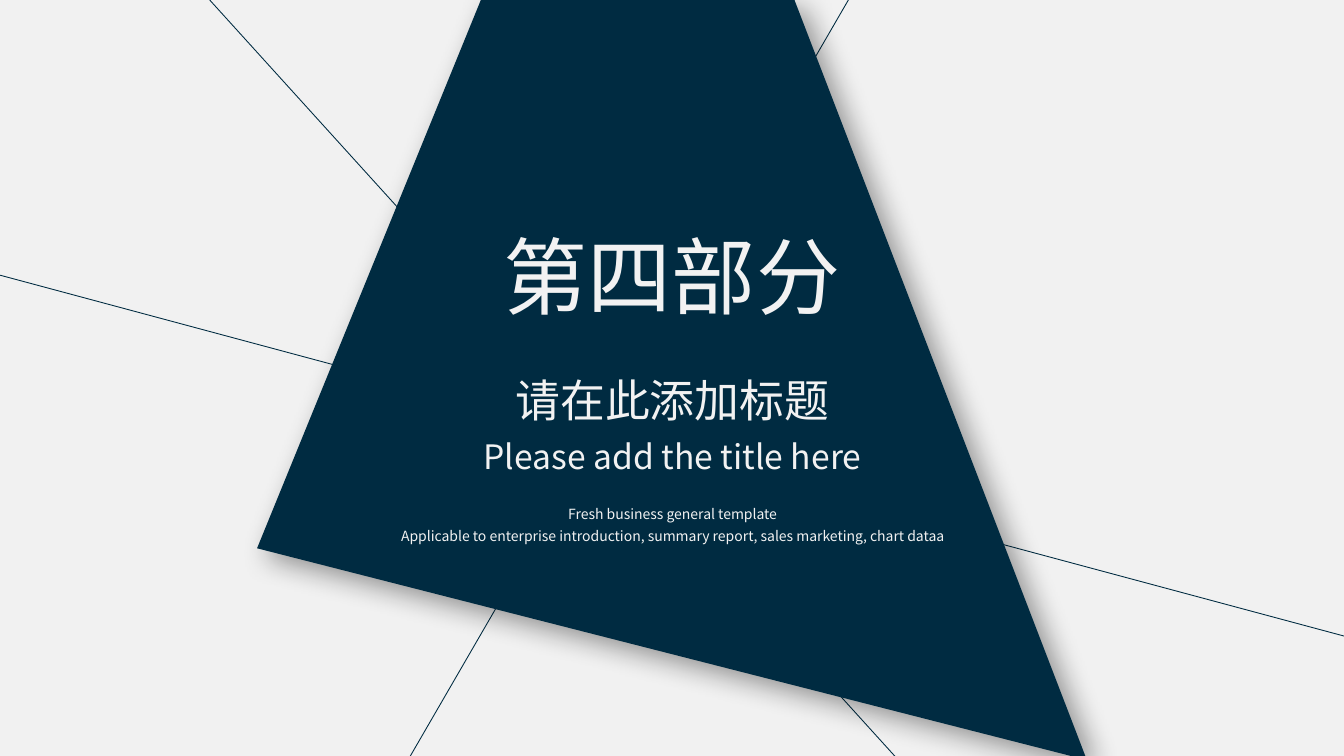
import pptx
import pptx.dml.color
import pptx.enum.shapes
import pptx.enum.text
import pptx.oxml
import pptx.oxml.ns
import pptx.util
from lxml import etree

Inches = pptx.util.Inches
Pt = pptx.util.Pt
NAVY = pptx.dml.color.RGBColor(0x00, 0x2B, 0x41)
PALE = pptx.dml.color.RGBColor(0xF1, 0xF1, 0xF1)
WHITE = pptx.dml.color.RGBColor(0xF2, 0xF2, 0xF2)
FONT = "Noto Sans CJK SC"
qn = pptx.oxml.ns.qn

SHADOW = (
    f'<a:effectLst {pptx.oxml.ns.nsdecls("a")}>'
    '<a:outerShdw blurRad="254000" dist="127000" dir="2700000" algn="tl" rotWithShape="0">'
    '<a:srgbClr val="000000"><a:alpha val="40000"/></a:srgbClr>'
    '</a:outerShdw></a:effectLst>'
)


class SlideBuilder:
    def __init__(self, slide):
        self.s = slide

    def background(self, color):
        fill = self.s.background.fill
        fill.solid()
        fill.fore_color.rgb = color

    def line(self, x1, y1, x2, y2):
        sp = self.s.shapes.add_connector(
            pptx.enum.shapes.MSO_CONNECTOR.STRAIGHT,
            Inches(x1), Inches(y1), Inches(x2), Inches(y2))
        sp.line.color.rgb = NAVY
        sp.line.width = Pt(0.63)
        etree.SubElement(sp.element.spPr, qn("a:effectLst"))

    def panel(self, points):
        corners = [(Inches(x), Inches(y)) for x, y in points]
        fb = self.s.shapes.build_freeform(*corners[0])
        fb.add_line_segments(corners[1:], close=True)
        sp = fb.convert_to_shape()
        sp.fill.solid()
        sp.fill.fore_color.rgb = NAVY
        sp.line.fill.background()
        sp.element.spPr.append(pptx.oxml.parse_xml(SHADOW))

    def text(self, x, y, w, h, size, lines, wrap=True, spacing=None):
        sp = self.s.shapes.add_textbox(Inches(x), Inches(y), Inches(w), Inches(h))
        tf = sp.text_frame
        tf.word_wrap = wrap
        tf.auto_size = pptx.enum.text.MSO_AUTO_SIZE.SHAPE_TO_FIT_TEXT
        for i, line in enumerate(lines):
            p = tf.add_paragraph() if i else tf.paragraphs[0]
            p.alignment = pptx.enum.text.PP_ALIGN.CENTER
            p.line_spacing = spacing
            r = p.add_run()
            r.text = line
            r.font.size = Pt(size)
            r.font.name = FONT
            r.font.color.rgb = WHITE
            etree.SubElement(r.font._element, qn("a:ea"), typeface=FONT)


def main():
    prs = pptx.Presentation()
    prs.slide_width, prs.slide_height = Inches(13.33), Inches(7.5)
    b = SlideBuilder(prs.slides.add_slide(prs.slide_layouts[6]))
    b.background(PALE)

    # Thin lines crossing behind the panel
    b.line(8.53, -0.2, 4.07, 7.5)
    b.line(8.91, 7.54, 2.08, 0)
    b.line(0, 2.73, 13.33, 6.31)

    # Dark panel
    b.panel([(4.77, 0), (7.88, 0), (10.78, 7.54), (2.55, 5.44)])

    # Section number, description and titles
    b.text(4.88, 2.18, 3.57, 1.11, 60, ["第四部分"], wrap=False)
    b.text(2.56, 4.92, 8.22, 0.54, 10, [
        "Fresh business general template",
        "Applicable to enterprise introduction, summary report, sales marketing, chart dataa",
    ], spacing=1.3)
    b.text(4.62, 4.28, 4.1, 0.5, 24, ["Please add the title here"], wrap=False)
    b.text(4.73, 3.65, 3.88, 0.64, 32, ["请在此添加标题"])

    prs.save("out.pptx")


if __name__ == "__main__":
    main()
